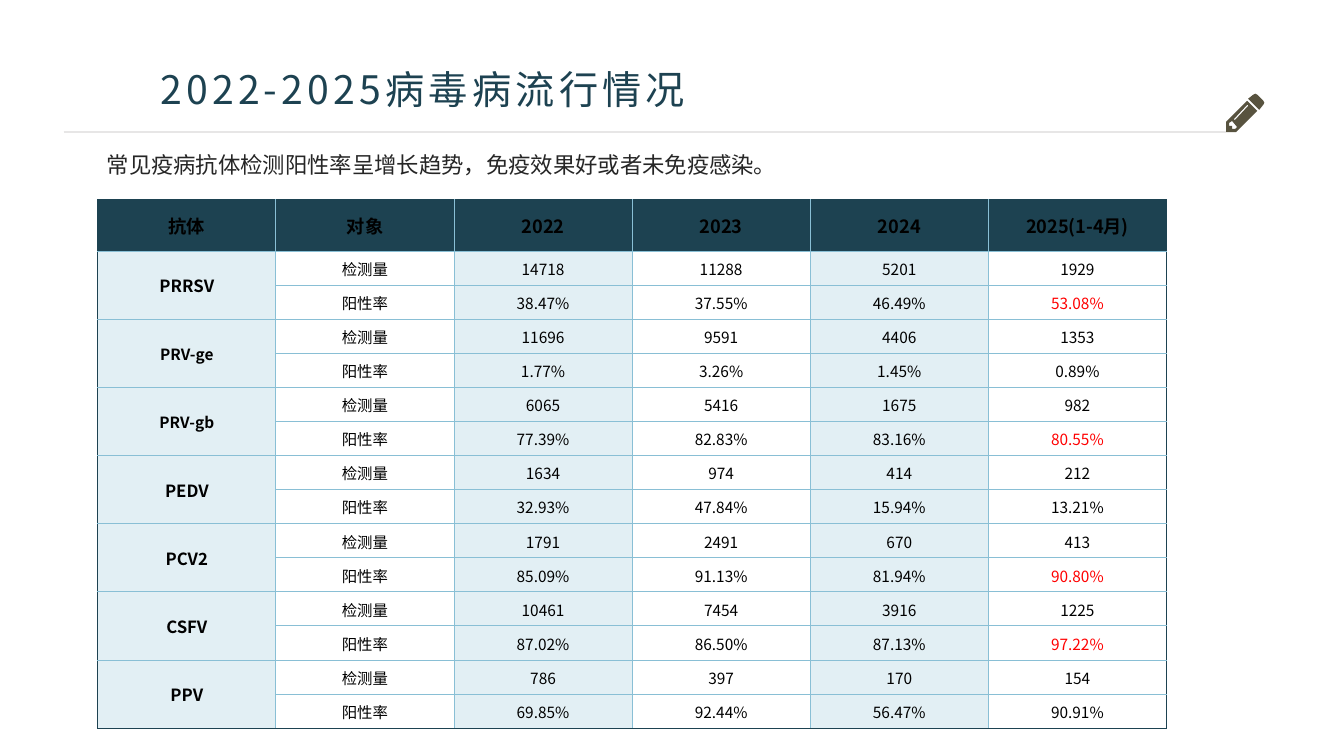
"""Build the 2022-2025 virus antibody prevalence slide."""
from lxml.etree import SubElement
from pptx import Presentation
from pptx.dml.color import RGBColor
from pptx.enum.text import MSO_ANCHOR, PP_ALIGN
from pptx.oxml.ns import qn
from pptx.util import Inches, Pt

FONT = "Noto Sans CJK SC"
TEAL = RGBColor(0x1D, 0x42, 0x51)
SKY = RGBColor(0x89, 0xBF, 0xD5)
PALE = RGBColor(0xE2, 0xEF, 0xF4)
WHITE = RGBColor(0xFF, 0xFF, 0xFF)
BLACK = RGBColor(0, 0, 0)
RED = RGBColor(0xFF, 0, 0)
CHARCOAL = RGBColor(0x26, 0x26, 0x26)
GREY = RGBColor(0xE7, 0xE6, 0xE6)
OLIVE = RGBColor(0x58, 0x53, 0x3F)


def style_run(r, size, color, bold=False):
    r.font.size, r.font.bold, r.font.name = Pt(size), bold, FONT
    r.font.color.rgb = color
    SubElement(r._r.get_or_add_rPr(), qn("a:ea"), typeface=FONT)


def add_border(cell, side, color):
    ln = SubElement(cell._tc.get_or_add_tcPr(), qn(f"a:ln{side}"), w=str(Pt(0.75)))
    fill = SubElement(ln, qn("a:solidFill"))
    SubElement(fill, qn("a:srgbClr"), val=str(color))


prs = Presentation()
prs.slide_width, prs.slide_height = Inches(13.33), Inches(7.5)
s = prs.slides.add_slide(prs.slide_layouts[5])

rule = s.shapes.add_connector(1, Inches(0.63), Inches(1.31), Inches(12.16), Inches(1.31))
rule.line.color.rgb, rule.line.width = GREY, Pt(2)
SubElement(rule._element.spPr, qn("a:effectLst"))

ERASER = [[(1245, 93), (1247, 94), (1253, 100), (1254, 102), (1253, 104),
           (1249, 109), (1238, 98), (1243, 94)]]
BODY = [[(1237, 100), (1247, 110), (1226, 131), (1216, 131), (1216, 121)],
        [(1238, 104), (1237, 104), (1224, 118), (1224, 119), (1225, 119), (1238, 105)],
        [(1222, 120), (1219, 122), (1219, 125), (1222, 125), (1222, 128),
         (1225, 128), (1227, 126)]]
pencil = s.shapes.add_group_shape()
for outlines in (ERASER, BODY):
    ff = pencil.shapes.build_freeform(*outlines[0][0], scale=Inches(0.01))
    for i, points in enumerate(outlines):
        if i:
            ff.move_to(*points[0])
        ff.add_line_segments(points[1:], close=True)
    sp = ff.convert_to_shape()
    sp.shadow.inherit = False
    sp.fill.solid()
    sp.fill.fore_color.rgb = OLIVE
    sp.line.fill.background()

title = s.shapes.title
title.left, title.top, title.width, title.height = map(Inches, (1.49, 0.6, 6.53, 0.57))
tf = title.text_frame
tf.text = "2022-2025病毒病流行情况"
tf.vertical_anchor = MSO_ANCHOR.MIDDLE
p = tf.paragraphs[0]
p.alignment = PP_ALIGN.LEFT
style_run(p.runs[0], 28, TEAL)
p.runs[0]._r.get_or_add_rPr().set("spc", "300")

HEADER = ["抗体", "对象", "2022", "2023", "2024", "2025(1-4月)"]
RESULTS = [
    ("PRRSV", 12, ["14718", "11288", "5201", "1929"], ["38.47%", "37.55%", "46.49%", "53.08%"]),
    ("PRV-ge", 11, ["11696", "9591", "4406", "1353"], ["1.77%", "3.26%", "1.45%", "0.89%"]),
    ("PRV-gb", 11, ["6065", "5416", "1675", "982"], ["77.39%", "82.83%", "83.16%", "80.55%"]),
    ("PEDV", 12, ["1634", "974", "414", "212"], ["32.93%", "47.84%", "15.94%", "13.21%"]),
    ("PCV2", 12, ["1791", "2491", "670", "413"], ["85.09%", "91.13%", "81.94%", "90.80%"]),
    ("CSFV", 12, ["10461", "7454", "3916", "1225"], ["87.02%", "86.50%", "87.13%", "97.22%"]),
    ("PPV", 12, ["786", "397", "170", "154"], ["69.85%", "92.44%", "56.47%", "90.91%"]),
]
HIGHLIGHTS = {"53.08%", "80.55%", "90.80%", "97.22%"}

rows, sizes = [HEADER], [13]
for virus, size, counts, rates in RESULTS:
    rows += [[virus, "检测量"] + counts, ["", "阳性率"] + rates]
    sizes += [size, size]
last_row, last_col = len(rows) - 1, len(HEADER) - 1

table = s.shapes.add_table(len(rows), len(HEADER), Inches(0.97), Inches(1.98),
                           Inches(10.6), Inches(5.25)).table
table.first_row = table.horz_banding = False
for row in table.rows:
    row.height = Inches((5.25 - 0.51) / last_row)
table.rows[0].height = Inches(0.51)

for i, row in enumerate(rows):
    for j, text in enumerate(row):
        cell = table.cell(i, j)
        if j == 0 and i % 2:
            cell.merge(table.cell(i + 1, 0))
        bottom = i + 1 if cell.is_merge_origin else i
        edges = {"L": j == 0, "R": j == last_col, "T": i == 0,
                 "B": i == 0 and j in (0, last_col) or i == 0 or bottom == last_row}
        for side, outer in edges.items():
            add_border(cell, side, TEAL if outer else SKY)
        cell.fill.solid()
        cell.fill.fore_color.rgb = TEAL if i == 0 else WHITE if j % 2 else PALE
        cell.margin_left = cell.margin_right = cell.margin_top = Inches(0.01)
        cell.margin_bottom = 0
        cell.vertical_anchor = MSO_ANCHOR.MIDDLE
        if text:
            cell.text = text
            p = cell.text_frame.paragraphs[0]
            p.alignment = PP_ALIGN.CENTER
            strong = i == 0 or j == 0
            style_run(p.runs[0], sizes[i] if strong else 11,
                      RED if text in HIGHLIGHTS else BLACK, strong)

summary = s.shapes.add_textbox(Inches(0.96), Inches(1.32), Inches(11.45), Inches(0.5))
tf = summary.text_frame
tf.word_wrap = True
tf.text = "常见疫病抗体检测阳性率呈增长趋势，免疫效果好或者未免疫感染。"
p = tf.paragraphs[0]
p.line_spacing = 1.5
style_run(p.runs[0], 16, CHARCOAL)

prs.save("out.pptx")
